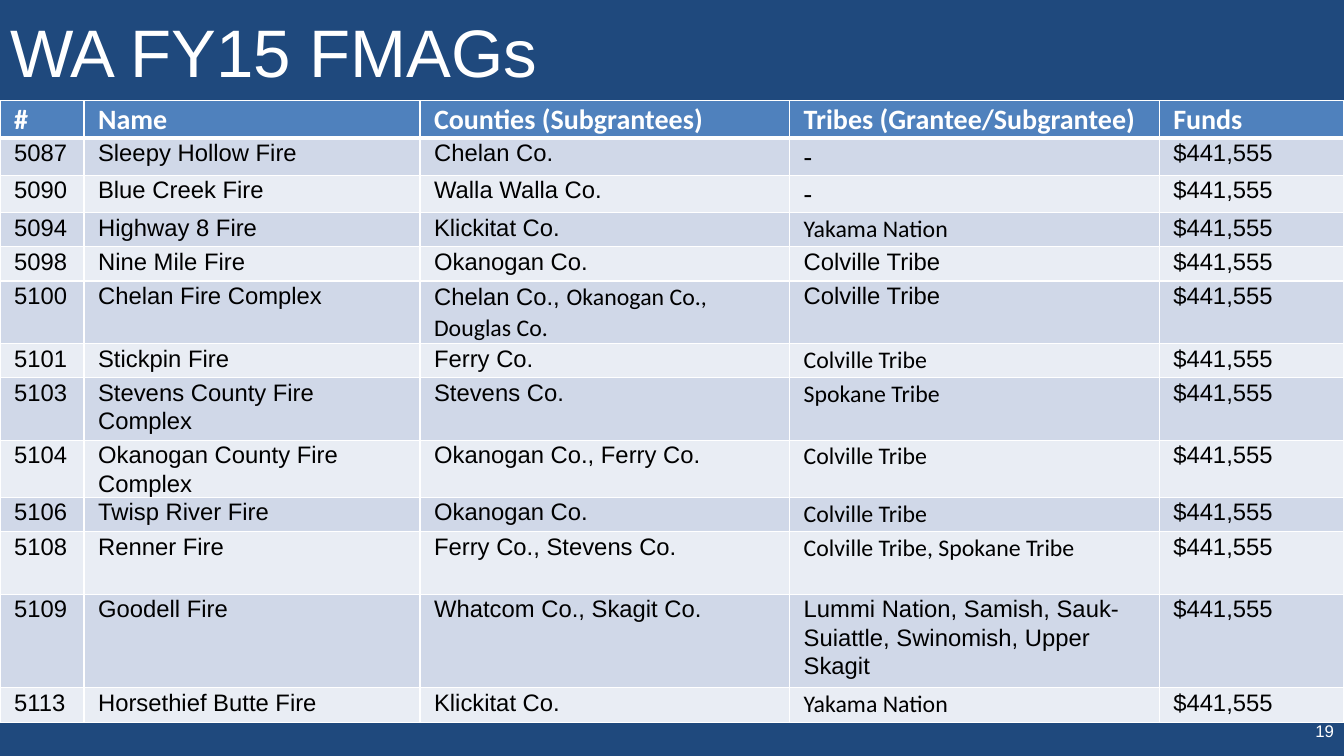
import pptx
import pptx.util
import pptx.dml.color
import pptx.enum.shapes
import pptx.enum.text
import pptx.oxml.ns
import lxml.etree

RGB = pptx.dml.color.RGBColor
NAVY = RGB(0x1F, 0x49, 0x7D)
BLUE = RGB(0x4F, 0x81, 0xBD)
BAND_DARK = RGB(0xD0, 0xD8, 0xE8)
BAND_LIGHT = RGB(0xE9, 0xED, 0xF4)
WHITE = RGB(0xFF, 0xFF, 0xFF)
BLACK = RGB(0, 0, 0)

COLUMNS, ROWS = 16, 15  # grid over the whole slide
FUNDS = "$441,555"
HEADINGS = ["#", "Name", "Counties (Subgrantees)", "Tribes (Grantee/Subgrantee)", "Funds"]
COLUMN_SPANS = [1, 4, 4.4, 4.4, 2.2]
HEADER_HEIGHT = 0.37


def arial(text):
    return text, "Arial", 17


def calibri(text, size=17):
    return text, "Calibri", size


# Number, name, county runs, tribe run, row height in inches
FIRES = [
    ("5087", "Sleepy Hollow Fire", [arial("Chelan Co.")], calibri("-", 20), 0.37),
    ("5090", "Blue Creek Fire", [arial("Walla Walla Co.")], calibri("-", 20), 0.37),
    ("5094", "Highway 8 Fire", [arial("Klickitat Co.")], calibri("Yakama Nation"), 0.34),
    ("5098", "Nine Mile Fire", [arial("Okanogan Co.")], arial("Colville Tribe"), 0.34),
    ("5100", "Chelan Fire Complex",
     [arial("Chelan Co., "), calibri("Okanogan Co., Douglas Co.")],
     arial("Colville Tribe"), 0.62),
    ("5101", "Stickpin Fire", [arial("Ferry Co.")], calibri("Colville Tribe"), 0.34),
    ("5103", "Stevens County Fire Complex", [arial("Stevens Co.")],
     calibri("Spokane Tribe"), 0.62),
    ("5104", "Okanogan County Fire Complex", [arial("Okanogan Co., Ferry Co.")],
     calibri("Colville Tribe"), 0.36),
    ("5106", "Twisp River Fire", [arial("Okanogan Co.")], calibri("Colville Tribe"), 0.34),
    ("5108", "Renner Fire", [arial("Ferry Co., Stevens Co.")],
     calibri("Colville Tribe, Spokane Tribe"), 0.62),
    ("5109", "Goodell Fire", [arial("Whatcom Co., Skagit Co.")],
     arial("Lummi Nation, Samish, Sauk-Suiattle, Swinomish, Upper Skagit"), 0.93),
    ("5113", "Horsethief Butte Fire", [arial("Klickitat Co.")],
     calibri("Yakama Nation"), 0.34),
]


class GrantSlide:
    def __init__(self, deck):
        self.column = deck.slide_width / COLUMNS
        self.row = deck.slide_height / ROWS
        self.slide = deck.slides.add_slide(deck.slide_layouts[5])

    def area(self, left, top, width, height):
        return (round(left * self.column), round(top * self.row),
                round(width * self.column), round(height * self.row))

    def add_runs(self, paragraph, runs, color, bold=False):
        for text, font, size in runs:
            run = paragraph.add_run()
            run.text = text
            run.font.name = font
            run.font.size = pptx.util.Pt(size)
            run.font.bold = bold
            run.font.color.rgb = color

    def band(self, top, height):
        bar = self.slide.shapes.add_shape(
            pptx.enum.shapes.MSO_SHAPE.RECTANGLE, *self.area(0, top, COLUMNS, height))
        bar.shadow.inherit = False
        bar.fill.solid()
        bar.fill.fore_color.rgb = NAVY
        bar.line.fill.background()

    def label(self, box, runs, align):
        frame = box.text_frame
        frame.word_wrap = True
        frame.auto_size = pptx.enum.text.MSO_AUTO_SIZE.NONE
        frame.vertical_anchor = pptx.enum.text.MSO_ANCHOR.MIDDLE
        frame.paragraphs[0].alignment = align
        self.add_runs(frame.paragraphs[0], runs, WHITE)

    def title(self, text):
        heading = self.slide.shapes.title
        heading.left, heading.top, heading.width, heading.height = self.area(0, 0, 13.82, 2)
        # Bring the title in front of the bands
        heading.element.getparent().append(heading.element)
        self.label(heading, [(text, "Arial", 48)], pptx.enum.text.PP_ALIGN.LEFT)

    def page_number(self, text):
        box = self.slide.shapes.add_textbox(*self.area(12.26, 14, 3.74, 1))
        self.label(box, [(text, "Arial", 12)], pptx.enum.text.PP_ALIGN.RIGHT)

    def border(self, cell, side, points):
        qn = pptx.oxml.ns.qn
        line = lxml.etree.SubElement(cell._tc.get_or_add_tcPr(), qn("a:ln" + side),
                                     w=str(pptx.util.Pt(points)))
        fill = lxml.etree.SubElement(line, qn("a:solidFill"))
        lxml.etree.SubElement(fill, qn("a:srgbClr"), val=str(WHITE))

    def cell(self, cell, runs, fill, color, bold, edges):
        for side, points in edges.items():
            self.border(cell, side, points)
        cell.fill.solid()
        cell.fill.fore_color.rgb = fill
        cell.margin_left = cell.margin_right = pptx.util.Inches(0.14)
        cell.margin_top = cell.margin_bottom = 0
        paragraph = cell.text_frame.paragraphs[0]
        paragraph.line_spacing = 1.07
        self.add_runs(paragraph, runs, color, bold)

    def table(self, rows, heights):
        grid = self.slide.shapes.add_table(
            len(rows), len(COLUMN_SPANS), *self.area(0, 2, COLUMNS, 12)).table
        grid.horz_banding = False
        for column, span in zip(grid.columns, COLUMN_SPANS):
            column.width = round(span * self.column)
        for index, (cells, height) in enumerate(zip(rows, heights)):
            grid.rows[index].height = pptx.util.Inches(height)
            header = index == 0
            fill = BLUE if header else BAND_DARK if index % 2 else BAND_LIGHT
            edges = {"L": 1, "R": 1, "T": 3 if index == 1 else 1, "B": 3 if header else 1}
            for position, runs in enumerate(cells):
                self.cell(grid.cell(index, position), runs, fill,
                          WHITE if header else BLACK, header, edges)


def main():
    deck = pptx.Presentation()
    deck.slide_width = pptx.util.Inches(13.33)
    deck.slide_height = pptx.util.Inches(7.5)
    page = GrantSlide(deck)

    # Bands and title
    page.band(14, 1)
    page.band(0, 2)
    page.title("WA FY15 FMAGs")

    # Grants table
    rows = [[[calibri(heading, 20)] for heading in HEADINGS]]
    heights = [HEADER_HEIGHT]
    for number, name, counties, tribes, height in FIRES:
        rows.append([[arial(number)], [arial(name)], counties, [tribes], [arial(FUNDS)]])
        heights.append(height)
    page.table(rows, heights)

    # Page number
    page.page_number("19")
    deck.save("out.pptx")


if __name__ == "__main__":
    main()
